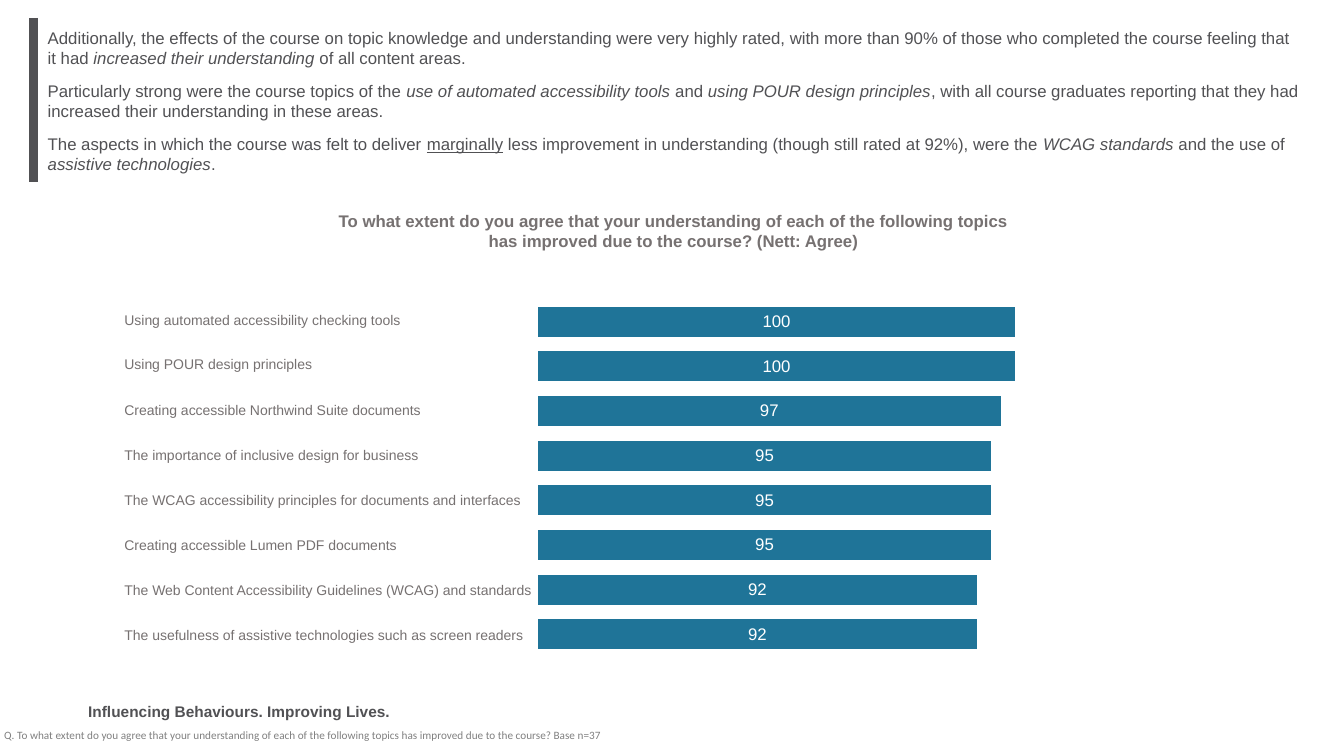
from dataclasses import dataclass
from typing import Optional

import pptx
import pptx.chart.data
import pptx.dml.color
import pptx.enum.chart
import pptx.enum.shapes
import pptx.enum.text
import pptx.oxml
import pptx.oxml.ns
import pptx.util

EMU_PER_PX = 9525
DARK, GREY, NOTE_GREY, BLUE, WHITE = "515154", "767171", "808080", "1F7498", "FFFFFF"
MIDDLE = pptx.enum.text.MSO_ANCHOR.MIDDLE
TOP = pptx.enum.text.MSO_ANCHOR.TOP


@dataclass(frozen=True)
class Box:
    left: int
    top: int
    width: int
    height: int

    def emu(self) -> tuple:
        return tuple(px(n) for n in (self.left, self.top, self.width, self.height))


@dataclass(frozen=True)
class Style:
    size: int
    color: str
    bold: bool = False
    name: str = "Arial"


@dataclass(frozen=True)
class Phrase:
    text: str
    italic: Optional[bool] = None
    underline: Optional[bool] = None


@dataclass(frozen=True)
class Topic:
    label: str
    agree: int


TOPICS = [
    Topic("Using automated accessibility checking tools", 100),
    Topic("Using POUR design principles", 100),
    Topic("Creating accessible Northwind Suite documents", 97),
    Topic("The importance of inclusive design for business", 95),
    Topic("The WCAG accessibility principles for documents and interfaces", 95),
    Topic("Creating accessible Lumen PDF documents", 95),
    Topic("The Web Content Accessibility Guidelines (WCAG) and standards", 92),
    Topic("The usefulness of assistive technologies such as screen readers", 92),
]
FINDINGS = [
    [
        Phrase("Additionally, the effects of the course on topic knowledge and understanding were very "
               "highly rated, with more than 90% of those who completed the course feeling that it had "),
        Phrase("increased their understanding ", italic=True),
        Phrase("of all content areas."),
    ],
    [
        Phrase("Particularly strong were the course topics of the "),
        Phrase("use of automated accessibility tools ", italic=True),
        Phrase("and "),
        Phrase("using POUR design principles", italic=True),
        Phrase(", with all course graduates reporting that they had increased their understanding "
               "in these areas."),
    ],
    [
        Phrase("The aspects in which the course was felt to deliver "),
        Phrase("marginally", underline=True),
        Phrase(" less improvement in understanding (though still rated at 92%), were the "),
        Phrase("WCAG standards ", italic=True),
        Phrase("and the use of "),
        Phrase("assistive technologies", italic=True),
        Phrase("."),
    ],
]
QUESTION = "To what extent do you agree that your understanding of each of the following topics has improved due to the course?"
LABEL_TOP, LABEL_SPAN = 291, 300


def px(length: int) -> int:
    return pptx.util.Emu(length * EMU_PER_PX)


def rgb(color: str):
    return pptx.dml.color.RGBColor.from_string(color)


def apply_style(font, style: Style) -> None:
    font.size = pptx.util.Pt(style.size)
    font.name = style.name
    font.bold = style.bold
    font.color.rgb = rgb(style.color)


def add_text(slide, box: Box, text: str, style: Style, anchor=MIDDLE, inset: Optional[int] = None):
    shape = slide.shapes.add_textbox(*box.emu())
    frame = shape.text_frame
    frame.word_wrap = True
    frame.vertical_anchor = anchor
    if inset is not None:
        frame.margin_left = frame.margin_right = px(inset)
        frame.margin_top = frame.margin_bottom = px(inset)
    frame.text = text
    for run in frame.paragraphs[0].runs:
        apply_style(run.font, style)
    return frame


def place_title(slide) -> None:
    title = slide.shapes.title
    title.left, title.top, title.width, title.height = Box(297, 198, 689, 44).emu()
    frame = title.text_frame
    frame.text = f"{QUESTION} (Nett: Agree)"
    frame.word_wrap = True
    frame.auto_size = pptx.enum.text.MSO_AUTO_SIZE.NONE
    frame.vertical_anchor = MIDDLE
    paragraph = frame.paragraphs[0]
    paragraph.alignment = pptx.enum.text.PP_ALIGN.CENTER
    apply_style(paragraph.runs[0].font, Style(12, GREY, bold=True))


def add_findings(slide) -> None:
    frame = add_text(slide, Box(36, 23, 1212, 146), "", Style(12, DARK))
    for index, phrases in enumerate(FINDINGS):
        paragraph = frame.add_paragraph() if index else frame.paragraphs[0]
        paragraph.space_after = pptx.util.Pt(9)
        for phrase in phrases:
            run = paragraph.add_run()
            run.text = phrase.text
            apply_style(run.font, Style(12, DARK))
            run.font.italic = phrase.italic
            run.font.underline = phrase.underline


def add_accent_line(slide) -> None:
    line = slide.shapes.add_connector(
        pptx.enum.shapes.MSO_CONNECTOR.STRAIGHT, px(32), px(17), px(32), px(173))
    line.line.color.rgb = rgb(DARK)
    line.line.width = pptx.util.Pt(6)
    line._element.spPr.append(pptx.oxml.parse_xml(
        f"<a:effectLst {pptx.oxml.ns.nsdecls('a')}/>"))


def set_plot_layout(chart, x: float, y: float, width: float, height: float) -> None:
    plot_area = chart._chartSpace.chart.plotArea
    for layout in plot_area.findall(pptx.oxml.ns.qn("c:layout")):
        plot_area.remove(layout)
    plot_area.insert(0, pptx.oxml.parse_xml(
        f"<c:layout {pptx.oxml.ns.nsdecls('c')}><c:manualLayout>"
        '<c:layoutTarget val="inner"/><c:xMode val="edge"/><c:yMode val="edge"/>'
        f'<c:x val="{x}"/><c:y val="{y}"/><c:w val="{width}"/><c:h val="{height}"/>'
        "</c:manualLayout></c:layout>"))


def add_agreement_chart(slide) -> None:
    data = pptx.chart.data.CategoryChartData()
    data.categories = [str(number) for number in range(1, len(TOPICS) + 1)]
    data.add_series("Series 1", [topic.agree for topic in TOPICS])
    chart = slide.shapes.add_chart(
        pptx.enum.chart.XL_CHART_TYPE.BAR_STACKED, *Box(57, 242, 958, 431).emu(), data).chart
    apply_style(chart.font, Style(10, DARK))
    chart.has_title = False
    chart.has_legend = False
    chart.category_axis.visible = False
    chart.category_axis.reverse_order = True
    chart.value_axis.visible = False
    chart.value_axis.has_major_gridlines = False
    chart.value_axis.minimum_scale = -100
    chart.value_axis.maximum_scale = 100
    set_plot_layout(chart, 0, 0.1, 0.95, 0.79)

    plot = chart.plots[0]
    plot.vary_by_categories = False
    plot.gap_width = 50
    plot.overlap = 100
    series = plot.series[0]
    series.invert_if_negative = False
    series.format.fill.solid()
    series.format.fill.fore_color.rgb = rgb(BLUE)
    labels = series.data_labels
    labels.show_value = True
    labels.position = pptx.enum.chart.XL_LABEL_POSITION.CENTER
    apply_style(labels.font, Style(12, WHITE))


def main() -> None:
    presentation = pptx.Presentation()
    presentation.slide_width, presentation.slide_height = px(1280), px(720)
    slide = presentation.slides.add_slide(presentation.slide_layouts.get_by_name("Title Only"))
    place_title(slide)
    tagline = add_text(slide, Box(80, 661, 379, 29), "Influencing Behaviours. Improving Lives.",
                       Style(11, DARK, bold=True), inset=4)
    tagline.paragraphs[0].line_spacing = 1.2
    add_agreement_chart(slide)
    for index, topic in enumerate(TOPICS):
        top = LABEL_TOP + index * LABEL_SPAN // (len(TOPICS) - 1)
        add_text(slide, Box(109, top, 457, 28), topic.label, Style(10, GREY))
    note = add_text(slide, Box(0, 690, 1146, 37), f"Q. {QUESTION} Base n=37",
                    Style(8, NOTE_GREY, name="Calibri"), anchor=TOP, inset=4)
    note.paragraphs[0].line_spacing = pptx.util.Pt(9)
    add_accent_line(slide)
    add_findings(slide)
    presentation.save("out.pptx")


if __name__ == "__main__":
    main()
